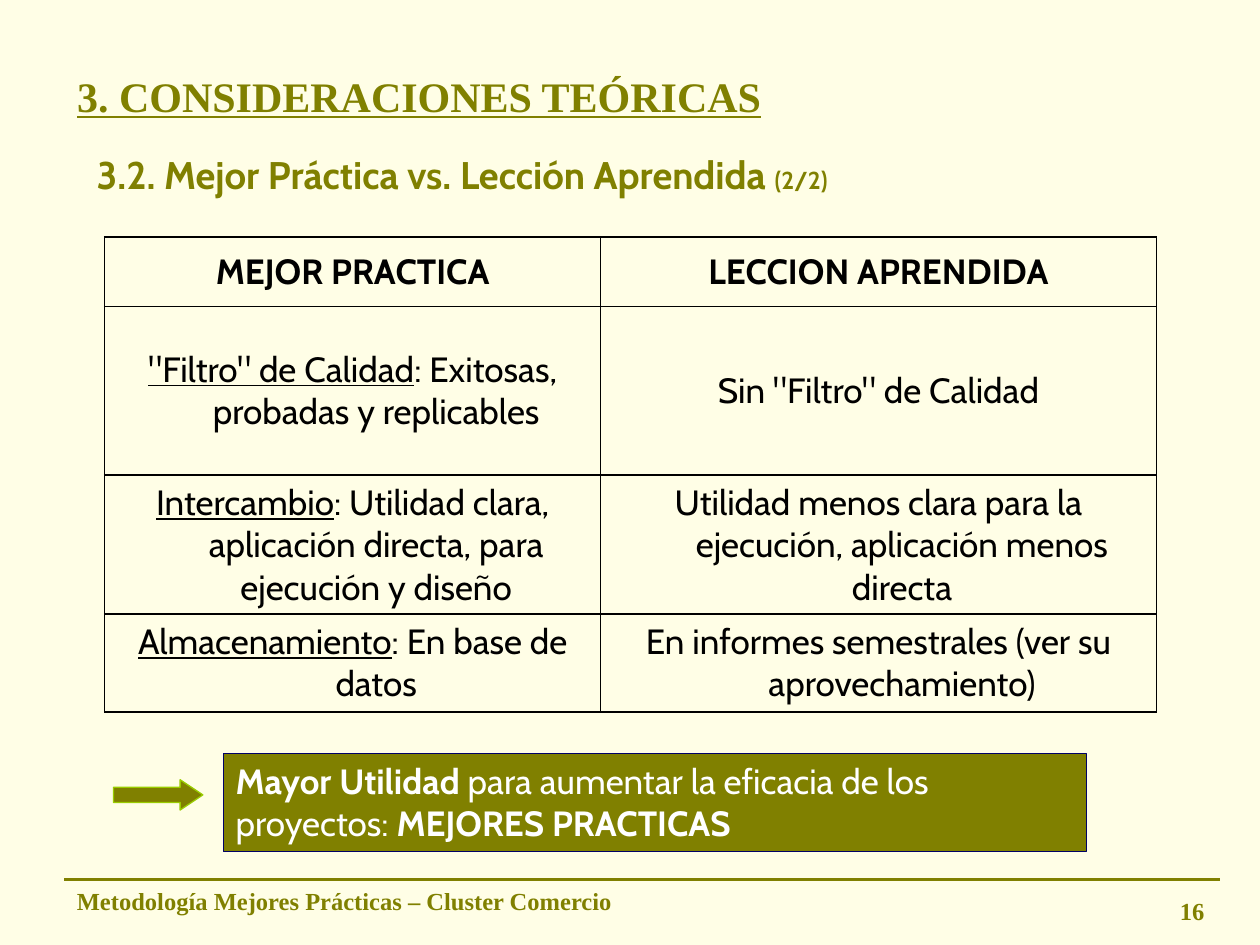
import pptx
import pptx.dml.color
import pptx.enum.shapes
import pptx.enum.text
import pptx.oxml
import pptx.oxml.ns
import pptx.util
from lxml import etree

Cm = pptx.util.Cm
Pt = pptx.util.Pt
ALIGN = pptx.enum.text.PP_ALIGN
ANCHOR = pptx.enum.text.MSO_ANCHOR
SHAPE = pptx.enum.shapes.MSO_SHAPE
HUES = {"cream": "FFFEE6", "olive": "808000", "lime": "99CC00",
        "navy": "000066", "black": "000000", "white": "FFFFFF"}
SERIF, SANS = "Times New Roman", "Cabin"


def hue(name):
    return pptx.dml.color.RGBColor.from_string(HUES[name])


def box(*sides):
    return [Cm(side) for side in sides]


class Deck:
    def __init__(self):
        self.prs = pptx.Presentation()
        self.prs.slide_width, self.prs.slide_height = Cm(25.4), Cm(19.05)
        self.slide = self.prs.slides.add_slide(self.prs.slide_layouts[5])
        fill = self.slide.background.fill
        fill.solid()
        fill.fore_color.rgb = hue("cream")

    def put(self, frame, runs, font, size, tint, align=ALIGN.LEFT):
        """Fill the first paragraph; each run is (text, marks[, size]), marks from "b" and "u"."""
        par = frame.paragraphs[0]
        par.alignment = align
        for text, marks, *own in runs:
            run = par.add_run()
            run.text = text
            face = run.font
            face.name, face.size = font, Pt(own[0] if own else size)
            face.bold, face.underline = "b" in marks, "u" in marks
            face.color.rgb = hue(tint)
        return par

    def title(self, place, text):
        head = self.slide.shapes.title
        head.left, head.top, head.width, head.height = box(*place)
        frame = head.text_frame
        frame.vertical_anchor = ANCHOR.MIDDLE
        frame.auto_size = pptx.enum.text.MSO_AUTO_SIZE.NONE
        self.put(frame, [(text, "bu")], SERIF, 24, "olive")

    def text(self, place, runs, font, size, align=ALIGN.LEFT):
        frame = self.slide.shapes.add_textbox(*box(*place)).text_frame
        frame.word_wrap = True
        self.put(frame, runs, font, size, "olive", align)

    def shape(self, kind, place, edge):
        item = self.slide.shapes.add_shape(kind, *box(*place))
        item.shadow.inherit = False
        item.fill.solid()
        item.fill.fore_color.rgb = hue("olive")
        item.line.color.rgb = hue(edge)
        item.line.width = Pt(0.75)
        return item

    def note(self, place, runs):
        frame = self.shape(SHAPE.RECTANGLE, place, "navy").text_frame
        frame.word_wrap = True
        frame.vertical_anchor = ANCHOR.TOP
        self.put(frame, runs, SANS, 20, "white")

    def rule(self, left, right, top):
        line = self.slide.shapes.add_connector(
            pptx.enum.shapes.MSO_CONNECTOR.STRAIGHT, *box(left, top, right, top))
        line.line.color.rgb = hue("olive")
        line.line.width = Pt(2.25)
        etree.SubElement(line._element.spPr, pptx.oxml.ns.qn("a:effectLst"))

    def frame(self, cell):
        """Draw a thin black border on all four sides of a cell."""
        for side in "LRTB":
            cell._tc.get_or_add_tcPr().append(pptx.oxml.parse_xml(
                f'<a:ln{side} {pptx.oxml.ns.nsdecls("a")} w="{Pt(1)}"><a:solidFill>'
                f'<a:srgbClr val="{HUES["black"]}"/></a:solidFill></a:ln{side}>'))

    def table(self, left, top, widths, heights, rows):
        grid = self.slide.shapes.add_table(
            len(rows), len(widths), *box(left, top, sum(widths), sum(heights))).table
        grid.first_row = grid.horz_banding = False
        for col, width in zip(grid.columns, widths):
            col.width = Cm(width)
        for row, height, cells in zip(grid.rows, heights, rows):
            row.height = Cm(height)
            for cell, runs in zip(row.cells, cells):
                self.frame(cell)
                cell.fill.background()
                cell.vertical_anchor = ANCHOR.MIDDLE
                par = self.put(cell.text_frame, runs, SANS, 20, "black", ALIGN.CENTER)
                props = par._p.get_or_add_pPr()
                props.set("marL", str(Cm(0.95)))
                props.set("indent", str(-Cm(0.95)))


def main():
    deck = Deck()
    deck.rule(1.3, 24.59, 17.73)
    deck.text((1.3, 17.73, 12.2, 0.86),
              [("Metodología Mejores Prácticas – Cluster Comercio", "b")], SERIF, 14)
    deck.text((19.25, 17.93, 5.28, 0.91), [("16", "b")], SERIF, 14, ALIGN.RIGHT)
    deck.title((1.3, 1.12, 21.79, 1.6), "3. CONSIDERACIONES TEÓRICAS")
    arrow = deck.shape(SHAPE.RIGHT_ARROW, (2.29, 15.72, 1.8, 0.61), "lime")
    arrow.adjustments[1] = 0.75
    deck.table(2.11, 4.78, (10, 11.2), (1.4, 3.4, 2.77, 1.98), [
        [[("MEJOR PRACTICA", "b")], [("LECCION APRENDIDA", "b")]],
        [[('"Filtro" de Calidad', "u"), (": Exitosas, probadas y replicables", "")],
         [('Sin "Filtro" de Calidad', "")]],
        [[("Intercambio", "u"),
          (": Utilidad clara, aplicación directa, para ejecución y diseño", "")],
         [("Utilidad menos clara para la ejecución, aplicación menos directa", "")]],
        [[("Almacenamiento", "u"), (": En base de datos", "")],
         [("En informes semestrales (ver su aprovechamiento)", "")]],
    ])
    deck.note((4.5, 15.19, 17.4, 1.98), [
        ("Mayor Utilidad", "b"),
        (" para aumentar la eficacia de los proyectos: ", ""),
        ("MEJORES PRACTICAS", "b")])
    deck.text((1.7, 2.92, 18.16, 1.19), [
        ("3.2. Mejor Práctica vs. Lección Aprendida ", "b"), ("(2/2)", "b", 14)], SANS, 22)
    deck.prs.save("out.pptx")


if __name__ == "__main__":
    main()
